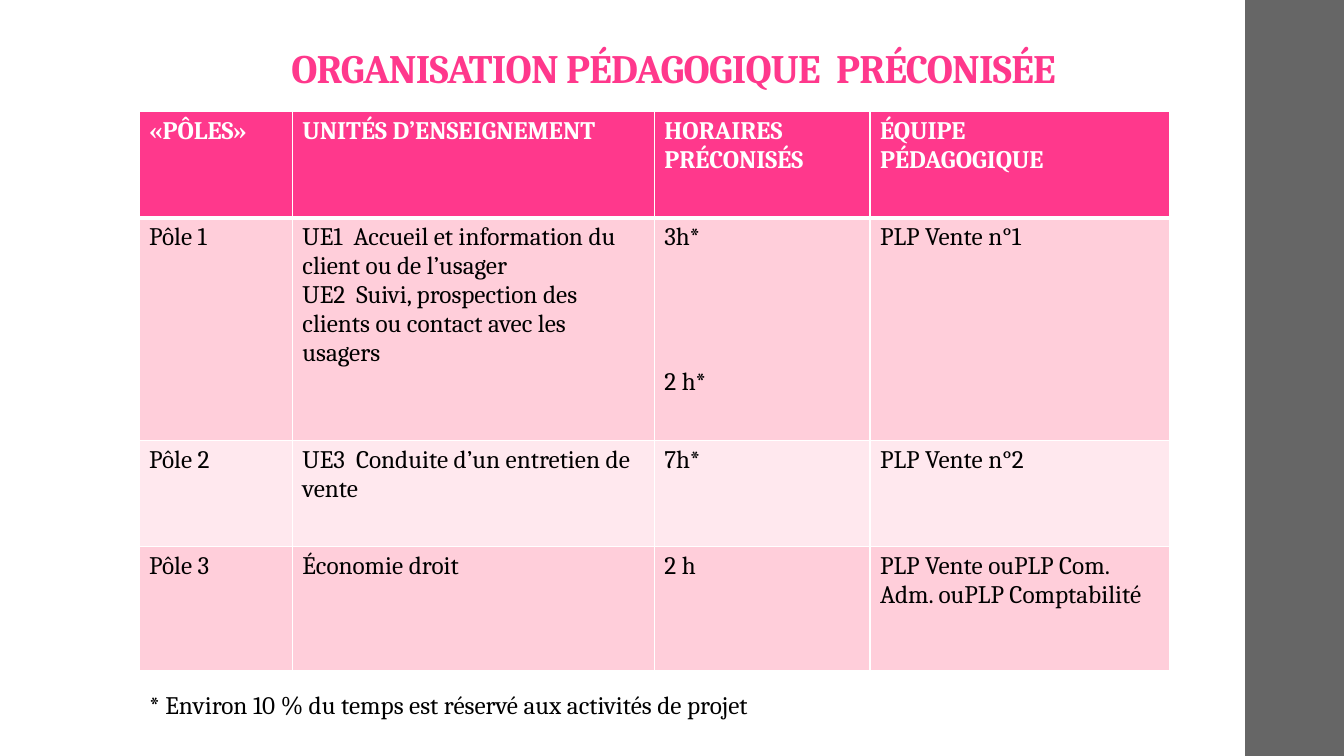
"""Build the slide on the recommended teaching organisation."""
from dataclasses import dataclass

from lxml import etree
from pptx import Presentation
from pptx.dml.color import RGBColor
from pptx.enum.shapes import MSO_SHAPE
from pptx.enum.text import MSO_ANCHOR, MSO_AUTO_SIZE, PP_ALIGN
from pptx.oxml.ns import qn
from pptx.util import Inches, Pt

RECTANGLE = MSO_SHAPE.RECTANGLE
BOTTOM = MSO_ANCHOR.BOTTOM
NO_FIT = MSO_AUTO_SIZE.NONE
CENTER = PP_ALIGN.CENTER

TITLE = "ORGANISATION PÉDAGOGIQUE  PRÉCONISÉE"
HEADINGS = ["«PÔLES»", "UNITÉS D’ENSEIGNEMENT", "HORAIRES\nPRÉCONISÉS", "ÉQUIPE\nPÉDAGOGIQUE"]
POLES = [
    ["Pôle 1",
     "UE1  Accueil et information du client ou de l’usager\n"
     "UE2  Suivi, prospection des clients ou contact avec les usagers",
     "3h*\n2 h*", "PLP Vente n°1"],
    ["Pôle 2", "UE3  Conduite d’un entretien de vente", "7h*", "PLP Vente n°2"],
    ["Pôle 3", "Économie droit", "2 h", "PLP Vente ouPLP Com. Adm. ouPLP Comptabilité"],
]
FOOTNOTE = "* Environ 10 % du temps est réservé aux activités de projet"

SLIDE_WIDTH, SLIDE_HEIGHT = 13.33, 7.5
LEFT = 1.38
COLUMNS = [1.52, 3.59, 2.14, 2.97]
ROWS = [1.05, 2.21, 1.05, 1.23]
TABLE_TOP = 1.11
BAND_WIDTH = 1
HOURS_COLUMN = 2
HOURS_GAP = 83


@dataclass(frozen=True)
class Theme:
    font: str = "Cambria"
    accent: str = "FF388C"
    bands: tuple = ("FFCEDA", "FFE8EE")
    band: str = "666666"
    light: str = "FFFFFF"
    dark: str = "000000"
    title_size: float = 28.8
    text_size: float = 18
    rule: float = 1
    heading_rule: float = 3


THEME = Theme()


def style(paragraph, size, color, bold=False):
    for run in paragraph.runs:
        run.font.name = THEME.font
        run.font.size = Pt(size)
        run.font.bold = bold
        run.font.color.rgb = RGBColor.from_string(color)


def add_border(cell, side, width):
    properties = cell._tc.get_or_add_tcPr()
    border = etree.SubElement(properties, qn(f"a:ln{side}"), w=str(Pt(width)))
    fill = etree.SubElement(border, qn("a:solidFill"))
    etree.SubElement(fill, qn("a:srgbClr"), val=THEME.light)


def add_side_band(slide):
    band = slide.shapes.add_shape(
        RECTANGLE, Inches(SLIDE_WIDTH - BAND_WIDTH + 0.02), 0,
        Inches(BAND_WIDTH - 0.02), Inches(SLIDE_HEIGHT))
    band.shadow.inherit = False
    band.fill.solid()
    band.fill.fore_color.rgb = RGBColor.from_string(THEME.band)
    band.line.fill.background()


def fill_title(title):
    title.left, title.top = Inches(LEFT), Inches(0.29)
    title.width, title.height = Inches(10.6), Inches(1.14)
    frame = title.text_frame
    frame.text = TITLE
    frame.word_wrap = True
    frame.auto_size = NO_FIT
    frame.vertical_anchor = BOTTOM
    frame.margin_top, frame.margin_bottom = Inches(0.03), Inches(0.52)
    heading = frame.paragraphs[0]
    heading.alignment = CENTER
    heading.line_spacing = 0.9
    style(heading, THEME.title_size, THEME.accent, True)
    heading.runs[0].font._element.set("spc", "-50")


def add_poles_table(slide):
    table = slide.shapes.add_table(
        len(ROWS), len(COLUMNS), Inches(LEFT), Inches(TABLE_TOP),
        Inches(sum(COLUMNS)), Inches(sum(ROWS))).table
    for column, width in zip(table.columns, COLUMNS):
        column.width = Inches(width)
    for row, height in zip(table.rows, ROWS):
        row.height = Inches(height)
    for r, texts in enumerate([HEADINGS, *POLES]):
        is_heading = r == 0
        fill = THEME.accent if is_heading else THEME.bands[(r - 1) % 2]
        color = THEME.light if is_heading else THEME.dark
        for c, text in enumerate(texts):
            cell = table.cell(r, c)
            cell.text_frame.text = text
            for paragraph in cell.text_frame.paragraphs:
                style(paragraph, THEME.text_size, color, is_heading)
            if c == HOURS_COLUMN and not is_heading:
                for later_hours in cell.text_frame.paragraphs[1:]:
                    later_hours.space_before = Pt(HOURS_GAP)
            top = THEME.heading_rule if r == 1 else THEME.rule
            bottom = THEME.heading_rule if is_heading else THEME.rule
            for side, width in zip("LRTB", (THEME.rule, THEME.rule, top, bottom)):
                add_border(cell, side, width)
            cell.fill.solid()
            cell.fill.fore_color.rgb = RGBColor.from_string(fill)


def add_footnote(slide):
    footnote = slide.shapes.add_textbox(Inches(LEFT), Inches(6.79), Inches(8.14), Inches(0.4))
    footnote.text_frame.word_wrap = True
    footnote.text_frame.text = FOOTNOTE
    style(footnote.text_frame.paragraphs[0], THEME.text_size, THEME.dark)


def main():
    deck = Presentation()
    deck.slide_width, deck.slide_height = Inches(SLIDE_WIDTH), Inches(SLIDE_HEIGHT)
    slide = deck.slides.add_slide(deck.slide_layouts.get_by_name("Title Only"))
    add_side_band(slide)
    fill_title(slide.shapes.title)
    add_poles_table(slide)
    add_footnote(slide)
    deck.save("out.pptx")


if __name__ == "__main__":
    main()
